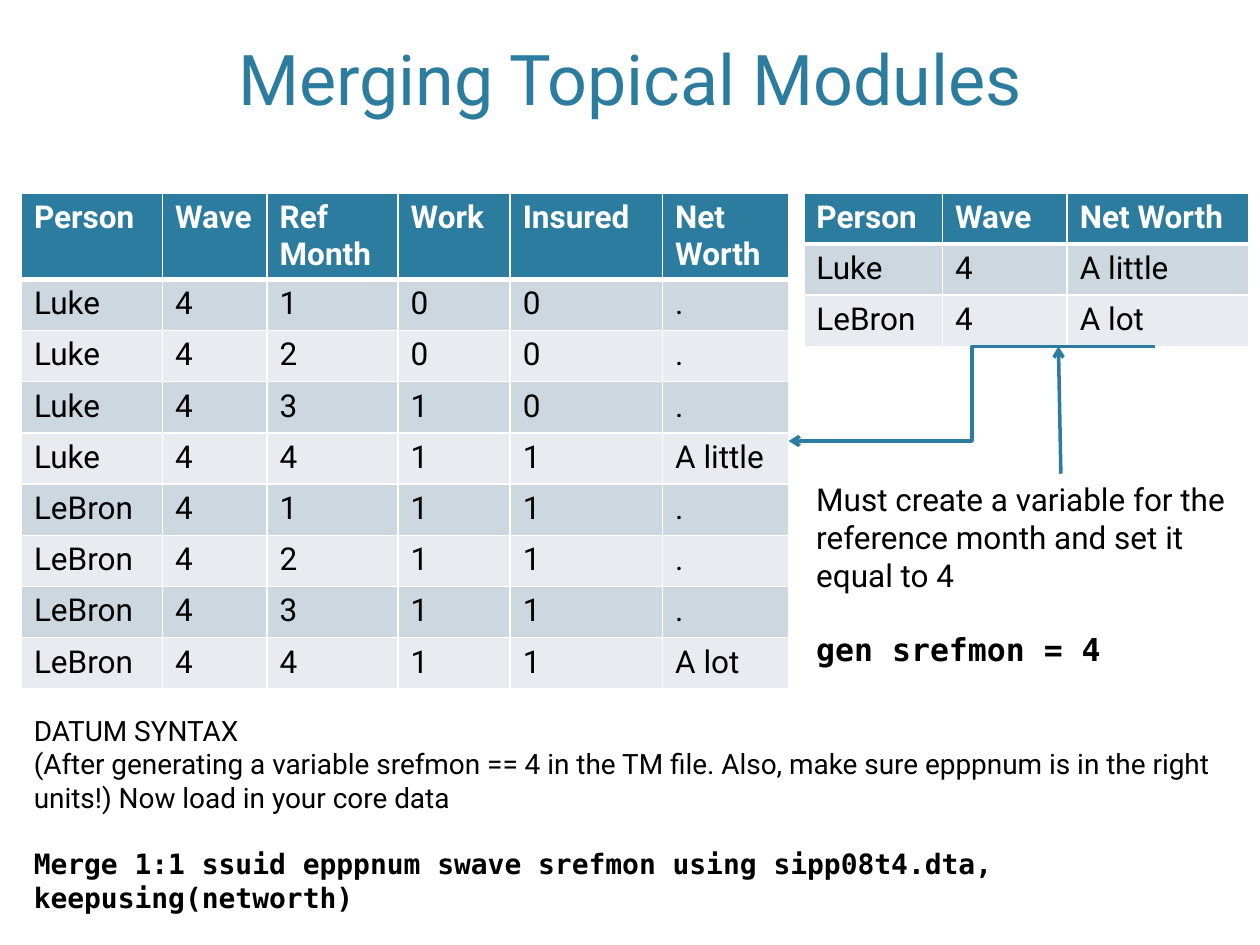
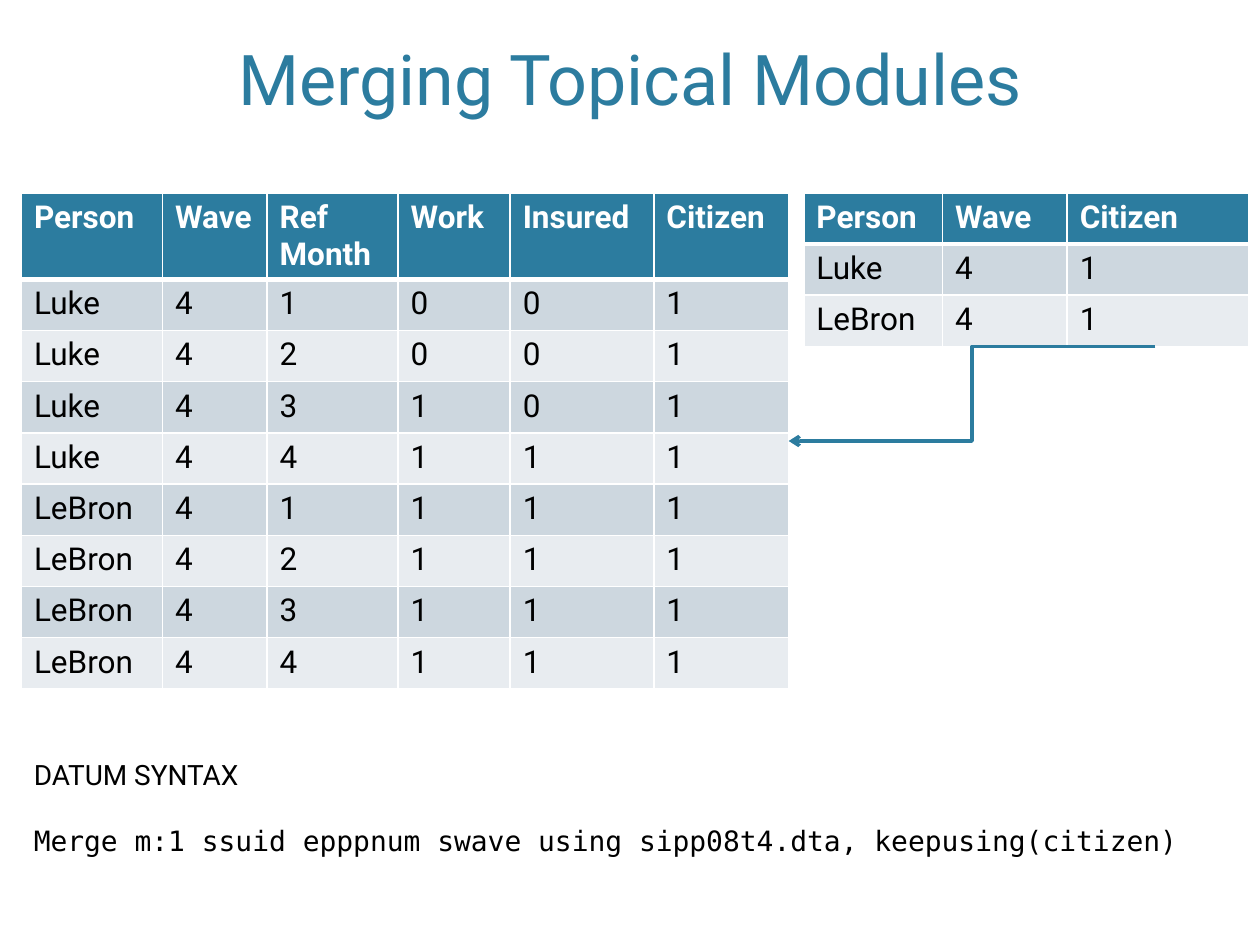
from dataclasses import dataclass

from lxml import etree
from pptx import Presentation
from pptx import util as u
from pptx.dml.color import RGBColor
from pptx.enum import shapes, text
from pptx.oxml import ns


@dataclass(frozen=True)
class Theme:
    accent: str = "2C7C9F"
    band_dark: str = "CDD7DF"
    band_light: str = "E8ECF0"
    white: str = "FFFFFF"
    ink: str = "000000"
    sans: str = "Roboto"
    mono: str = "DejaVu Sans Mono"
    title_size: int = 40
    body_size: int = 18
    syntax_size: int = 16
    line_width: int = 2


THEME = Theme()

# Content
TITLE = "Merging Topical Modules"
SYNTAX_HEADING = ("DATUM SYNTAX", False, False)
CORE_HEADER = ["Person", "Wave", "Ref Month", "Work", "Insured"]
CORE_ROWS = [
    ("Luke", "4", "1", "0", "0"),
    ("Luke", "4", "2", "0", "0"),
    ("Luke", "4", "3", "1", "0"),
    ("Luke", "4", "4", "1", "1"),
    ("LeBron", "4", "1", "1", "1"),
    ("LeBron", "4", "2", "1", "1"),
    ("LeBron", "4", "3", "1", "1"),
    ("LeBron", "4", "4", "1", "1"),
]
MODULE_HEADER = ["Person", "Wave"]
MODULE_ROWS = [("Luke", "4"), ("LeBron", "4")]

# Each paragraph: text, is it code, is it bold
SLIDES = [
    {
        "variable": "Net Worth",
        "merged": [".", ".", ".", "A little", ".", ".", ".", "A lot"],
        "module": ["A little", "A lot"],
        "last_columns": [1.21, 1.0],
        "syntax_top": 5.61,
        "syntax": [
            SYNTAX_HEADING,
            ("(After generating a variable srefmon == 4 in the TM file. Also, make sure "
             "epppnum is in the right units!) Now load in your core data", False, False),
            ("Merge 1:1 ssuid epppnum swave srefmon using sipp08t4.dta, "
             "keepusing(networth)", True, True),
        ],
        "note": [
            ("Must create a variable for the reference month and set it equal to 4",
             False, False),
            ("gen srefmon = 4", True, True),
        ],
    },
    {
        "variable": "Citizen",
        "merged": ["1"] * 8,
        "module": ["1", "1"],
        "last_columns": [1.14, 1.07],
        "syntax_top": 5.96,
        "syntax": [
            SYNTAX_HEADING,
            ("Merge m:1 ssuid epppnum swave using sipp08t4.dta, keepusing(citizen)",
             True, False),
        ],
    },
]

# Layout grid, in inches
WIDTH, HEIGHT = 10, 7.5
LEFT, TABLE_TOP = 0.17, 1.53
MODULE_LEFT, MODULE_COLUMNS = 6.38, [1.1, 0.99, 1.44]
MODULE_WIDTH = sum(MODULE_COLUMNS)
CORE_COLUMNS = [1.12, 0.83, 1.04, 0.89]
ROW_HEIGHT, TALL_HEADER = 1.22 / 3, 0.67
MODULE_BOTTOM = TABLE_TOP + 3 * ROW_HEIGHT
NOTE_TOP = 3.76
LINE_SPACING = 1.18


def color(value):
    return RGBColor.from_string(value)


def add_run(paragraph, words, size, ink, font=THEME.sans, bold=False):
    run = paragraph.add_run()
    run.text = words
    run.font.name, run.font.size, run.font.bold = font, u.Pt(size), bold
    run.font.color.rgb = color(ink)


def add_title(slide):
    title = slide.shapes.title
    title.left, title.top = u.Inches(0.06 * WIDTH), u.Inches(0.12)
    title.width, title.height = u.Inches(0.88 * WIDTH), u.Inches(0.88)
    frame = title.text_frame
    frame.vertical_anchor = text.MSO_ANCHOR.BOTTOM
    frame.paragraphs[0].alignment = text.PP_ALIGN.CENTER
    add_run(frame.paragraphs[0], TITLE, THEME.title_size, THEME.accent)


def set_borders(cell, top, bottom):
    """Draw white cell borders; they come before the fill in the cell properties."""
    properties = cell._tc.get_or_add_tcPr()
    widths = {"a:lnL": 1, "a:lnR": 1, "a:lnT": top, "a:lnB": bottom}
    for position, (tag, width) in enumerate(widths.items()):
        line = etree.Element(ns.qn(tag), w=str(u.Pt(width)))
        fill = etree.SubElement(line, ns.qn("a:solidFill"))
        etree.SubElement(fill, ns.qn("a:srgbClr"), val=THEME.white)
        properties.insert(position, line)


def add_data_table(slide, left, columns, rows, header_height):
    heights = [header_height] + [ROW_HEIGHT] * (len(rows) - 1)
    table = slide.shapes.add_table(
        len(rows), len(columns), u.Inches(left), u.Inches(TABLE_TOP),
        u.Inches(sum(columns)), u.Inches(sum(heights))).table
    for column, width in zip(table.columns, columns):
        column.width = u.Inches(width)
    for index, (row, height, values) in enumerate(zip(table.rows, heights, rows)):
        row.height = u.Inches(height)
        header = index == 0
        band = THEME.band_dark if index % 2 else THEME.band_light
        for cell, value in zip(row.cells, values):
            cell.fill.solid()
            cell.fill.fore_color.rgb = color(THEME.accent if header else band)
            set_borders(cell, top=3 if index == 1 else 1, bottom=3 if header else 1)
            add_run(cell.text_frame.paragraphs[0], value, THEME.body_size,
                    THEME.white if header else THEME.ink, bold=header)


def add_text(slide, left, top, width, height, paragraphs, size):
    box = slide.shapes.add_textbox(*map(u.Inches, (left, top, width, height)))
    frame = box.text_frame
    frame.word_wrap = True
    for index, (words, code, bold) in enumerate(paragraphs):
        paragraph = frame.add_paragraph() if index else frame.paragraphs[0]
        if code:  # one line of space above each command
            paragraph.space_before = u.Pt(size * LINE_SPACING)
        add_run(paragraph, words, size, THEME.ink,
                THEME.mono if code else THEME.sans, bold)


def add_arrow(slide, kind, start, end):
    connector = slide.shapes.add_connector(kind, *map(u.Inches, start + end))
    connector.line.color.rgb = color(THEME.accent)
    connector.line.width = u.Pt(THEME.line_width)
    etree.SubElement(connector.line._get_or_add_ln(), ns.qn("a:tailEnd"), type="arrow")
    etree.SubElement(connector._element.spPr, ns.qn("a:effectLst"))


def with_column(header, rows, name, values):
    return [(*header, name)] + [(*row, value) for row, value in zip(rows, values)]


def build_slide(presentation, content):
    slide = presentation.slides.add_slide(presentation.slide_layouts[5])
    add_title(slide)

    # Core file on the left, topical module on the right
    variable = content["variable"]
    add_data_table(slide, LEFT, CORE_COLUMNS + content["last_columns"],
                   with_column(CORE_HEADER, CORE_ROWS, variable, content["merged"]),
                   TALL_HEADER)
    add_data_table(slide, MODULE_LEFT, MODULE_COLUMNS,
                   with_column(MODULE_HEADER, MODULE_ROWS, variable, content["module"]),
                   ROW_HEIGHT)

    # Syntax across the foot of the slide
    top = content["syntax_top"]
    height = min(1.21 if "note" not in content else 2.02, HEIGHT - top)
    add_text(slide, LEFT, top, MODULE_LEFT + MODULE_WIDTH - LEFT, height,
             content["syntax"], THEME.syntax_size)

    # Note on the module, with its arrow
    if "note" in content:
        add_text(slide, MODULE_LEFT, NOTE_TOP, MODULE_WIDTH, 1.62,
                 content["note"], THEME.body_size)
        add_arrow(slide, shapes.MSO_CONNECTOR.STRAIGHT,
                  (8.42, NOTE_TOP), (8.4, MODULE_BOTTOM))

    # Merge arrow from the module to the core file
    add_arrow(slide, shapes.MSO_CONNECTOR.ELBOW, (9.17, MODULE_BOTTOM), (6.26, 3.5))


def main():
    presentation = Presentation()
    presentation.slide_width, presentation.slide_height = u.Inches(WIDTH), u.Inches(HEIGHT)
    for content in SLIDES:
        build_slide(presentation, content)
    presentation.save("out.pptx")


if __name__ == "__main__":
    main()
